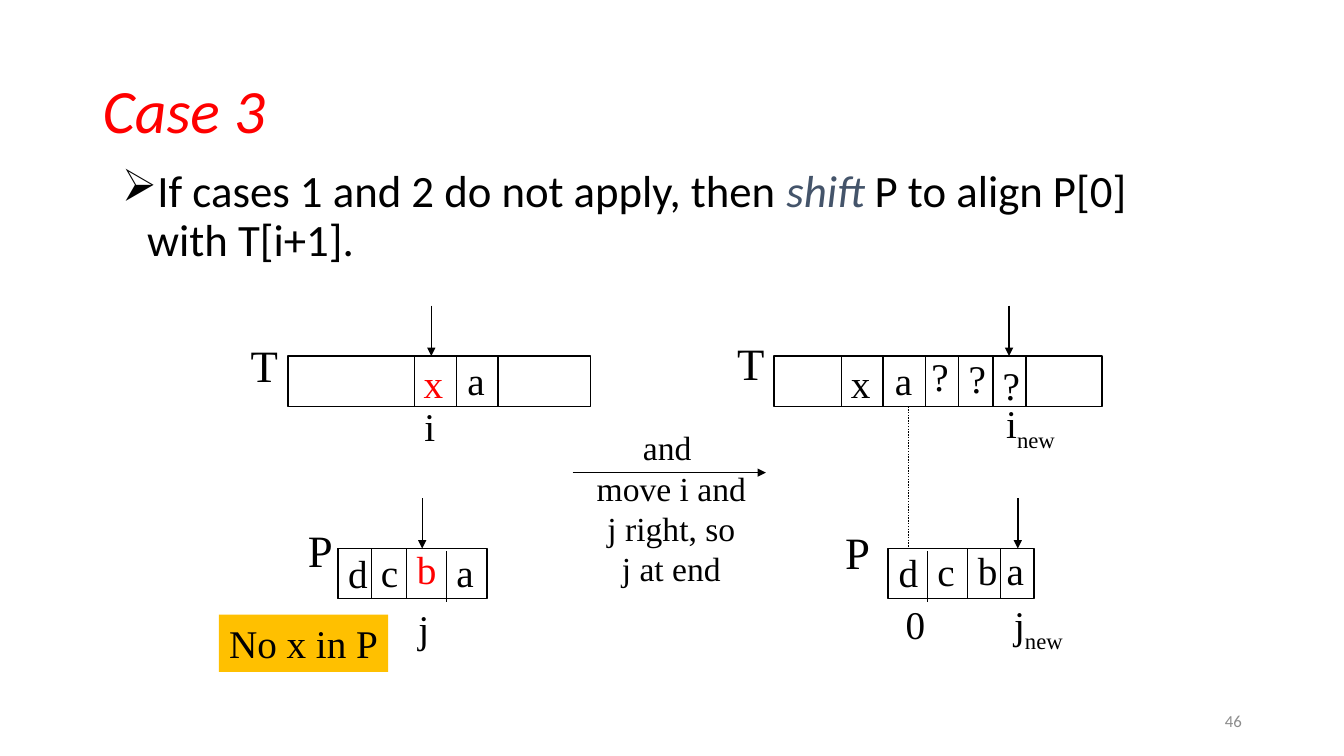
from lxml.etree import SubElement
from pptx import Presentation
from pptx.dml.color import RGBColor
from pptx.enum.dml import MSO_LINE_DASH_STYLE as Dash
from pptx.enum.shapes import MSO_CONNECTOR as Connector, MSO_SHAPE as Shape
from pptx.enum.text import MSO_ANCHOR as Anchor, MSO_AUTO_SIZE as AutoSize, PP_ALIGN as Align
from pptx.oxml.ns import qn
from pptx.util import Cm, Pt

BLACK, RED, SERIF, SANS = "000000", "FF0000", "Times New Roman", "Calibri"
CELL_HEIGHT = 1.27
TEXT_ROW, PATTERN_ROW = 8.97, 13.82


def color(value):
    """Turn a hex string into a colour."""
    return RGBColor.from_string(value)


def style(font, size, name, value=BLACK, italic=None):
    """Set the look of a font."""
    font.size, font.name, font.italic = Pt(size), name, italic
    font.color.rgb = color(value)


def text_frame(slide, left, top, width, height, anchor=Anchor.MIDDLE):
    """Add a wrapping text box and return its frame."""
    frame = slide.shapes.add_textbox(Cm(left), Cm(top), Cm(width), Cm(height)).text_frame
    frame.word_wrap = True
    frame.vertical_anchor = anchor
    return frame


def label(slide, text, center, top, size=28, value=BLACK, width=1, height=1.44, sub="", fill=None):
    """Add centred serif lines, with an optional subscript and fill."""
    box = slide.shapes.add_textbox(Cm(center - width / 2), Cm(top), Cm(width), Cm(height))
    if fill:
        box.fill.solid()
        box.fill.fore_color.rgb = color(fill)
    frame = box.text_frame
    frame.word_wrap = False
    frame.auto_size = AutoSize.SHAPE_TO_FIT_TEXT
    frame.vertical_anchor = Anchor.MIDDLE
    frame.text = text
    if sub:
        subscript = frame.paragraphs[0].add_run()
        subscript.text = sub
        subscript.font._element.set("baseline", "-25000")
    for paragraph in frame.paragraphs:
        paragraph.alignment = Align.CENTER
        style(paragraph.font, size, SERIF, value)


def line(slide, x1, y1, x2, y2, arrow=False, dash=None):
    """Draw a thin black line, optionally dashed or with an arrowhead."""
    stroke = slide.shapes.add_connector(Connector.STRAIGHT, Cm(x1), Cm(y1), Cm(x2), Cm(y2))
    stroke.line.color.rgb = color(BLACK)
    stroke.line.width = Pt(1)
    if dash:
        stroke.line.dash_style = dash
    if arrow:
        SubElement(stroke.line._get_or_add_ln(), qn("a:tailEnd"), type="triangle")
    SubElement(stroke._element.spPr, qn("a:effectLst"))


def cell_row(slide, left, top, width, dividers, pointer):
    """Draw an array with its dividers and the arrow marking an index."""
    row = slide.shapes.add_shape(Shape.RECTANGLE, Cm(left), Cm(top), Cm(width), Cm(CELL_HEIGHT))
    row.shadow.inherit = False
    row.fill.background()
    row.line.color.rgb = color(BLACK)
    row.line.width = Pt(1)
    for x, drop in dividers:
        line(slide, x, top + drop, x, top + drop + CELL_HEIGHT)
    line(slide, pointer, top - CELL_HEIGHT, pointer, top, arrow=True)


def heading(slide):
    """Add the title, the rule for this case and the page number."""
    title = text_frame(slide, 2.34, 1.02, 29.21, 3.68).paragraphs[0]
    title.text = "Case 3"
    title.line_spacing = 0.9
    style(title.font, 44, SANS, RED, True)

    rule = text_frame(slide, 2.82, 4.14, 27.53, 3.38, Anchor.TOP).paragraphs[0]
    rule.line_spacing = 0.9
    properties = rule._p.get_or_add_pPr()
    properties.set("marL", str(Cm(0.64)))
    properties.set("indent", str(-Cm(0.64)))
    SubElement(properties, qn("a:buChar"), char="➢")
    style(rule.font, 32, SANS)
    for part in ("If cases 1 and 2 do not apply, then ", "shift", " P to align P[0] with T[i+1]."):
        run = rule.add_run()
        run.text = part
        if part == "shift":
            run.font.italic = True
            run.font.color.rgb = color("44546A")

    number = text_frame(slide, 23.93, 17.65, 7.62, 1.02).paragraphs[0]
    number.text = "46"
    number.alignment = Align.RIGHT
    style(number.font, 12, SANS, "8C8C8C")


def before_shift(slide):
    """Draw text and pattern at the mismatch."""
    cell_row(slide, 7.26, TEXT_ROW, 7.62, [(x, 0) for x in (10.44, 11.51, 12.55)], 10.87)
    cell_row(slide, 8.51, PATTERN_ROW, 3.76, [(8.53, 0), (9.37, 0), (10.24, 0), (11.25, 0.07)], 10.64)
    for text, center, top in (("a", 12, 8.86), ("i", 10.83, 10.01), ("d", 9.02, 13.72),
                              ("c", 9.82, 13.69), ("a", 11.72, 13.69), ("j", 10.68, 15.09)):
        label(slide, text, center, top)
    label(slide, "x", 10.92, 8.92, value=RED)
    label(slide, "b", 10.75, 13.61, value=RED)
    label(slide, "T", 6.57, 8.38, 32, height=1.6)
    label(slide, "P", 8.01, 13.06, 32, height=1.6)
    label(slide, "No x in P", 7.65, 15.49, width=4.27, fill="FFC000")


def after_shift(slide):
    """Draw text and pattern once the pattern has moved."""
    cell_row(slide, 19.51, TEXT_ROW, 8.26,
             [(x, 0) for x in (21.21, 22.25, 23.32, 24.16, 25.02, 25.86)], 25.43)
    cell_row(slide, 22.38, PATTERN_ROW, 3.68, [(23.37, 0.07), (24.38, 0), (25.22, 0)], 25.65)
    line(slide, 22.89, TEXT_ROW + CELL_HEIGHT, 22.89, PATTERN_ROW, dash=Dash.ROUND_DOT)
    for text, center, top in (("x", 21.69, 8.92), ("a", 22.77, 8.86), ("?", 23.69, 8.74),
                              ("?", 24.63, 8.79), ("?", 25.49, 8.97), ("d", 22.89, 13.69),
                              ("c", 23.84, 13.67), ("b", 24.89, 13.64), ("a", 25.59, 13.64),
                              ("0", 23.07, 14.99)):
        label(slide, text, center, top)
    label(slide, "i", 25.97, 10.01, width=1.91, sub="new")
    label(slide, "j", 26.17, 15.09, width=1.91, sub="new")
    label(slide, "T", 18.83, 8.33, 32, height=1.6)
    label(slide, "P", 21.55, 13.11, 32, height=1.6)


def main():
    """Build and save the slide."""
    deck = Presentation()
    deck.slide_width, deck.slide_height = Cm(33.87), Cm(19.05)
    slide = deck.slides.add_slide(deck.slide_layouts[6])
    heading(slide)
    before_shift(slide)
    after_shift(slide)
    line(slide, 14.43, 11.91, 19.3, 11.91, arrow=True)
    label(slide, "and \nmove i and \nj right, so\nj at end", 16.92, 10.64, 24, width=4.47, height=4.32)
    deck.save("out.pptx")


if __name__ == "__main__":
    main()
